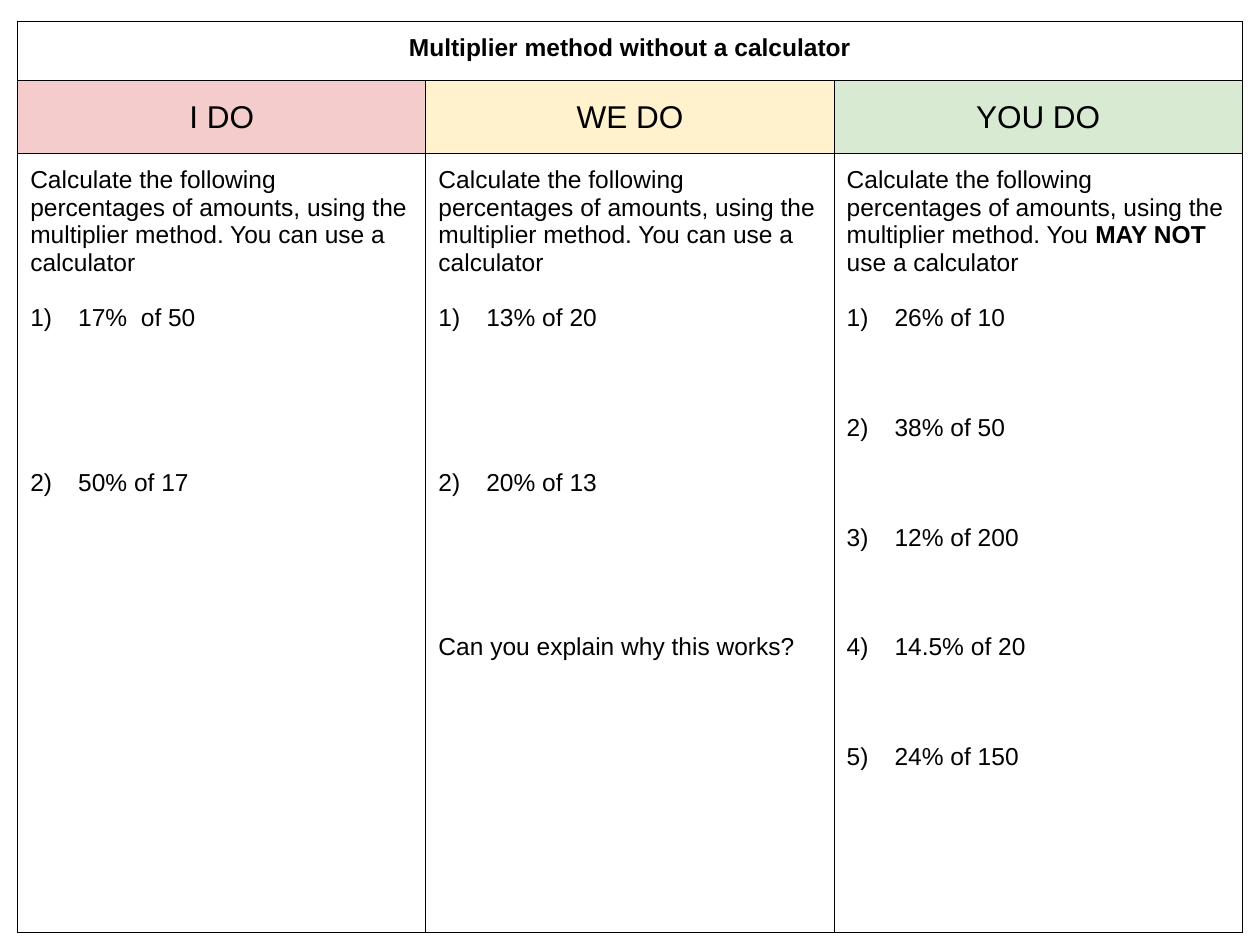
from lxml import etree
from pptx import Presentation
from pptx import util as u
from pptx.dml.color import RGBColor
from pptx.enum import text
from pptx.oxml import ns

LINE = 15.7  # height of one line of 14 pt text, in points
TASK = "Calculate the following percentages of amounts, using the multiplier method. You "
WITH_CALCULATOR = [(TASK + "can use a calculator", False)]
WITHOUT_CALCULATOR = [(TASK, False), ("MAY NOT ", True), ("use a calculator", False)]

# heading, fill, instruction, questions, blank lines between questions, closing question
COLUMNS = [
    ("I DO", "F4CCCC", WITH_CALCULATOR, ["17%  of 50", "50% of 17"], 5, None),
    ("WE DO", "FFF2CC", WITH_CALCULATOR, ["13% of 20", "20% of 13"], 5,
     "Can you explain why this works?"),
    ("YOU DO", "D9EAD3", WITHOUT_CALCULATOR,
     ["26% of 10", "38% of 50", "12% of 200", "14.5% of 20", "24% of 150"], 3, None),
]


def color(value):
    return RGBColor.from_string(value)


def add_xml(parent, tag, **attributes):
    return etree.SubElement(parent, ns.qn(tag), attributes)


class Worksheet:
    font = "Arial"
    ink = "000000"
    border = 0.75
    margin = 0.1
    indent = 0.38

    def __init__(self, slide):
        self.slide = slide

    def table(self, left, top, widths, heights):
        frame = self.slide.shapes.add_table(
            len(heights), len(widths), u.Inches(left), u.Inches(top),
            u.Inches(sum(widths)), u.Inches(sum(heights)))
        table = frame.table
        table.first_row = table.horz_banding = False
        for column, width in zip(table.columns, widths):
            column.width = u.Inches(width)
        for row, height in zip(table.rows, heights):
            row.height = u.Inches(height)
        for cell in table.iter_cells():
            self.style_cell(cell)
        return table

    def style_cell(self, cell):
        cell.margin_left = cell.margin_right = u.Inches(self.margin)
        cell.margin_top = cell.margin_bottom = u.Inches(self.margin)
        properties = cell._tc.get_or_add_tcPr()
        for side in ("a:lnL", "a:lnR", "a:lnT", "a:lnB"):
            line = add_xml(properties, side, w=str(u.Pt(self.border)))
            add_xml(add_xml(line, "a:solidFill"), "a:srgbClr", val=self.ink)
        cell.fill.background()

    def paragraph(self, cell, spans, size=14, bold=False, align=None, before=0, number=None):
        """Write a paragraph of (words, bold) spans, numbered if a number is given."""
        frame = cell.text_frame
        para = frame.paragraphs[0] if not cell.text else frame.add_paragraph()
        if number:
            properties = para._p.get_or_add_pPr()
            properties.set("marL", str(u.Inches(self.indent)))
            properties.set("indent", str(-u.Inches(self.indent)))
            add_xml(add_xml(properties, "a:buClr"), "a:srgbClr", val=self.ink)
            add_xml(properties, "a:buFont", typeface=self.font)
            add_xml(properties, "a:buAutoNum", type="arabicParenR", startAt=str(number))
        para.alignment = align
        para.space_before = u.Pt(before)
        para.font.name = self.font
        para.font.size = u.Pt(size)
        para.font.bold = bold
        para.font.color.rgb = color(self.ink)
        for words, strong in spans:
            span = para.add_run()
            span.text = words
            if strong:
                span.font.bold = True

    def title(self, cell, words):
        self.paragraph(cell, [(words, False)], bold=True, align=text.PP_ALIGN.CENTER)

    def heading(self, cell, words, fill):
        cell.fill.solid()
        cell.fill.fore_color.rgb = color(fill)
        cell.vertical_anchor = text.MSO_ANCHOR.MIDDLE
        self.paragraph(cell, [(words, False)], size=18, align=text.PP_ALIGN.CENTER)

    def exercise(self, cell, instruction, questions, blank_lines, closing):
        self.paragraph(cell, instruction)
        for number, question in enumerate(questions, 1):
            gap = LINE if number == 1 else blank_lines * LINE
            self.paragraph(cell, [(question, False)], before=gap, number=number)
        if closing:
            self.paragraph(cell, [(closing, False)], before=blank_lines * LINE)


def main():
    deck = Presentation()
    deck.slide_width, deck.slide_height = u.Inches(10), u.Inches(7.5)
    sheet = Worksheet(deck.slides.add_slide(deck.slide_layouts[6]))
    table = sheet.table(0.14, 0.17, [3.24] * 3, [0.47, 0.58, 6.18])
    table.cell(0, 0).merge(table.cell(0, 2))
    sheet.title(table.cell(0, 0), "Multiplier method without a calculator")
    for index, (heading, fill, *exercise) in enumerate(COLUMNS):
        sheet.heading(table.cell(1, index), heading, fill)
        sheet.exercise(table.cell(2, index), *exercise)
    deck.save("out.pptx")


if __name__ == "__main__":
    main()
